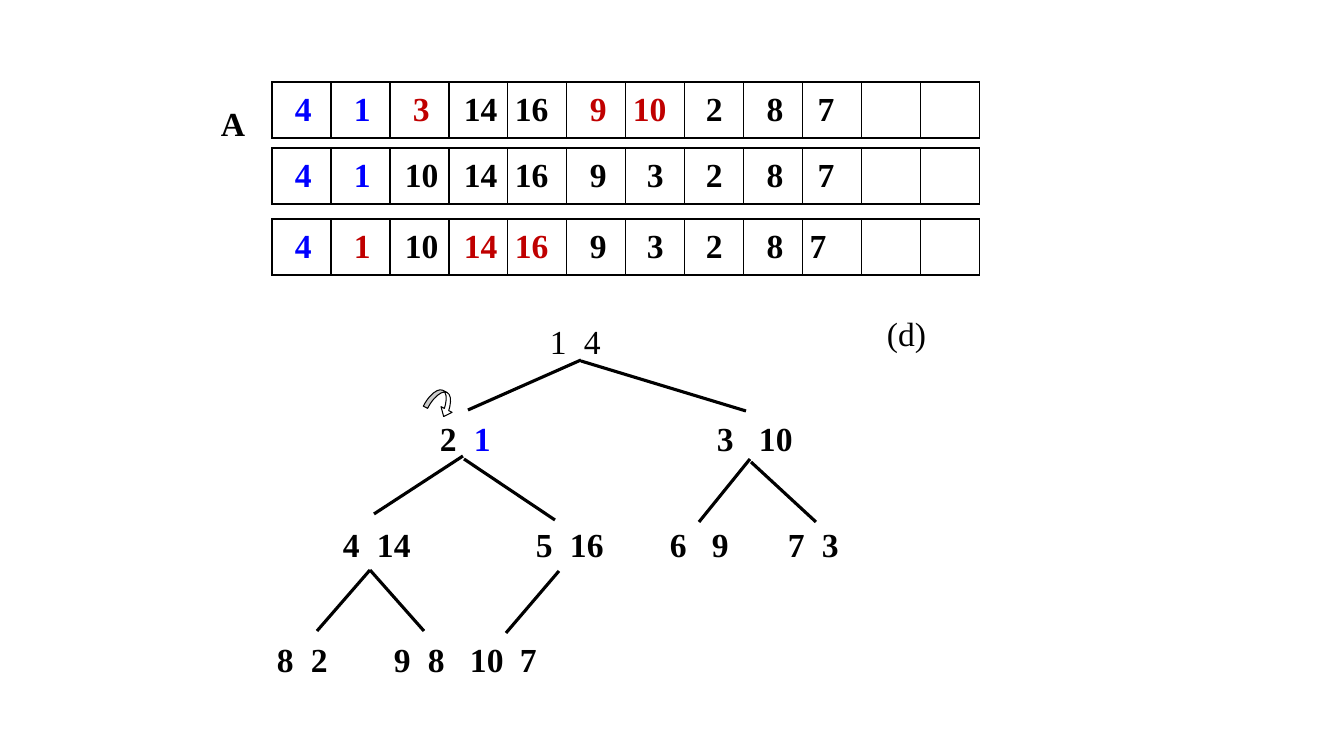
from lxml.etree import SubElement
from pptx import Presentation
from pptx.dml.color import RGBColor
from pptx.enum.shapes import MSO_CONNECTOR, MSO_SHAPE
from pptx.enum.text import MSO_ANCHOR, MSO_AUTO_SIZE, PP_ALIGN
from pptx.oxml.ns import qn
from pptx.util import Pt

COLORS = {"black": "000000", "white": "FFFFFF", "blue": "0000FF", "red": "C00000"}
FONT = "Times New Roman"

# Array states: top, values, colours by column, indent steps by column (None: centred)
ARRAYS = [
    (82, [4, 1, 3, 14, 16, 9, 10, 2, 8, 7],
     {0: "blue", 1: "blue", 2: "red", 5: "red", 6: "red"},
     [2, 2, 2, 1, 0, 2, 0, None, 2, 1]),
    (148, [4, 1, 10, 14, 16, 9, 3, 2, 8, 7],
     {0: "blue", 1: "blue"},
     [2, 2, 1, 1, 0, 2, None, None, 2, 1]),
    (219, [4, 1, 10, 14, 16, 9, 3, 2, 8, 7],
     {0: "blue", 1: "red", 3: "red", 4: "red"},
     [2, 2, 1, 1, 0, 2, None, None, 2, 0]),
]
ARRAY_LEFT, CELL_W, CELL_H, CELL_COUNT = 272, 59, 56, 12
CELL_INSET, INDENT_STEP = 7, 8

# Labels and tree levels: left, top, width, bold, [(x, text, colour)]
TEXTS = [
    (211, 98, 45, True, [(221, "A", "black")]),
    (877, 308, 67, False, [(887, "(d)", "black")]),
    (532, 316, 80, False, [(550, "1", "black"), (584, "4", "black")]),
    (430, 413, 386, True, [(440, "2", "black"), (474, "1", "blue"),
                           (717, "3", "black"), (759, "10", "black")]),
    (325, 519, 586, True, [(343, "4", "black"), (377, "14", "black"),
                           (536, "5", "black"), (570, "16", "black"),
                           (670, "6", "black"), (712, "9", "black"),
                           (788, "7", "black"), (822, "3", "black")]),
    (267, 634, 457, True, [(277, "8", "black"), (311, "2", "black"),
                           (394, "9", "black"), (428, "8", "black"),
                           (470, "10", "black"), (520, "7", "black")]),
]
TEXT_H = 50

# Tree edges: x and y of the parent end, then of the child end
EDGES = [
    (581, 360, 468, 410), (581, 361, 746, 411),
    (463, 456, 374, 514), (464, 459, 555, 520),
    (750, 459, 699, 522), (751, 462, 816, 522),
    (370, 570, 317, 631), (370, 570, 424, 631),
    (559, 571, 506, 633),
]
SWAP_ARROW = (430, 388, 23, 29)
SWAP_ROTATION = 297
SWAP_ADJUSTMENTS = (0.21, 0.54, 0.33)


def px(length):
    return round(length * 914400 / 100.8)


def rgb(name):
    return RGBColor.from_string(COLORS[name])


def set_font(paragraph, bold):
    font = paragraph.font
    font.name, font.size, font.bold = FONT, Pt(24), bold


def add_run(paragraph, text, color):
    run = paragraph.add_run()
    run.text = text
    run.font.color.rgb = rgb(color)


def add_edge(slide, x1, y1, x2, y2):
    edge = slide.shapes.add_connector(MSO_CONNECTOR.STRAIGHT, px(x1), px(y1), px(x2), px(y2))
    edge.line.color.rgb = rgb("black")
    edge.line.width = Pt(2.25)
    SubElement(edge.line._get_or_add_ln().getparent(), qn("a:effectLst"))


def add_text(slide, left, top, width, bold, items):
    """Place items on one line, each after the first at its own tab stop."""
    frame = slide.shapes.add_textbox(px(left), px(top), px(width), px(TEXT_H)).text_frame
    frame.word_wrap = True
    frame.auto_size = MSO_AUTO_SIZE.SHAPE_TO_FIT_TEXT
    start = items[0][0]
    frame.margin_left, frame.margin_right = px(start - left), 0
    line = frame.paragraphs[0]
    if len(items) > 1:
        stops = SubElement(line._p.get_or_add_pPr(), qn("a:tabLst"))
        for x, _, _ in items[1:]:
            SubElement(stops, qn("a:tab"), pos=str(px(x - start)), algn="l")
    set_font(line, bold)
    for i, (_, text, color) in enumerate(items):
        add_run(line, "\t" + text if i else text, color)


def style_cell(cell):
    for side in ("a:lnL", "a:lnR", "a:lnT", "a:lnB"):
        border = SubElement(cell._tc.get_or_add_tcPr(), qn(side), w=str(Pt(1)))
        paint = SubElement(border, qn("a:solidFill"))
        SubElement(paint, qn("a:srgbClr"), val=COLORS["black"])
    cell.fill.solid()
    cell.fill.fore_color.rgb = rgb("white")
    cell.vertical_anchor = MSO_ANCHOR.MIDDLE
    cell.margin_left = cell.margin_right = px(CELL_INSET)
    cell.margin_top = cell.margin_bottom = 0


def add_array(slide, top, values, colors, indents):
    table = slide.shapes.add_table(1, CELL_COUNT, px(ARRAY_LEFT), px(top),
                                   px(CELL_W * CELL_COUNT), px(CELL_H)).table
    table.first_row = table.horz_banding = False
    for column in table.columns:
        column.width = px(CELL_W)
    for cell in table.iter_cells():
        style_cell(cell)
    for i, (value, indent) in enumerate(zip(values, indents)):
        cell = table.cell(0, i)
        paragraph = cell.text_frame.paragraphs[0]
        if indent is None:
            paragraph.alignment = PP_ALIGN.CENTER
        else:
            cell.margin_left = px(CELL_INSET + indent * INDENT_STEP)
            cell.margin_right = 0
        set_font(paragraph, True)
        add_run(paragraph, str(value), colors.get(i, "black"))


def add_swap_arrow(slide):
    arrow = slide.shapes.add_shape(MSO_SHAPE.CURVED_LEFT_ARROW, *map(px, SWAP_ARROW))
    arrow.rotation = SWAP_ROTATION
    for i, value in enumerate(SWAP_ADJUSTMENTS):
        arrow.adjustments[i] = value
    arrow.shadow.inherit = False
    arrow.fill.solid()
    arrow.fill.fore_color.rgb = rgb("white")
    arrow.line.color.rgb = rgb("black")
    arrow.line.width = Pt(0.75)


def main():
    deck = Presentation()
    deck.slide_width, deck.slide_height = px(1344), px(756)
    slide = deck.slides.add_slide(deck.slide_layouts[6])
    for edge in EDGES:
        add_edge(slide, *edge)
    for text in TEXTS:
        add_text(slide, *text)
    add_swap_arrow(slide)
    for array in ARRAYS:
        add_array(slide, *array)
    deck.save("out.pptx")


if __name__ == "__main__":
    main()
